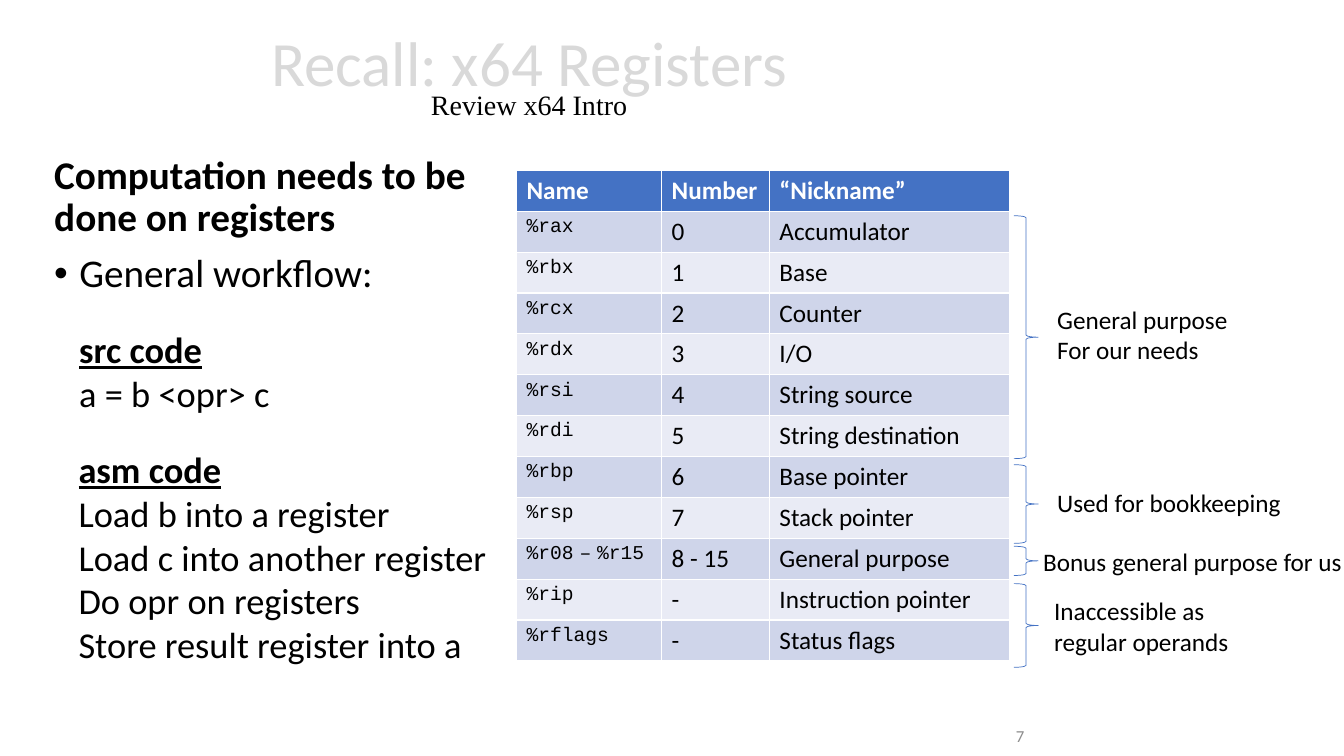
from lxml import etree
from pptx import Presentation
from pptx.dml.color import RGBColor
from pptx.enum.shapes import MSO_SHAPE
from pptx.enum.text import MSO_ANCHOR, MSO_AUTO_SIZE, PP_ALIGN
from pptx.oxml.ns import qn
from pptx.util import Pt

BLACK = RGBColor(0x00, 0x00, 0x00)
WHITE = RGBColor(0xFF, 0xFF, 0xFF)
BLUE = RGBColor(0x44, 0x72, 0xC4)
DARK_BAND = RGBColor(0xCF, 0xD5, 0xEA)
LIGHT_BAND = RGBColor(0xE9, 0xEB, 0xF5)
TITLE_GRAY = RGBColor(0xD9, 0xD9, 0xD9)
NUMBER_GRAY = RGBColor(0x8C, 0x8C, 0x8C)
RIGHT_BRACE = MSO_SHAPE.RIGHT_BRACE
MIDDLE = MSO_ANCHOR.MIDDLE
FIT_SHAPE, NO_FIT = MSO_AUTO_SIZE.SHAPE_TO_FIT_TEXT, MSO_AUTO_SIZE.NONE
CENTER, RIGHT = PP_ALIGN.CENTER, PP_ALIGN.RIGHT


def add_span(para, text, size, color=BLACK, name="Calibri", **formats):
    span = para.add_run()
    span.text = text
    span.font.color.rgb = color
    for key, value in {"size": Pt(size), "name": name, "bold": False, **formats}.items():
        setattr(span.font, key, value)


def add_label(left, top, width, height, lines, size, heading=False):
    """Add an unwrapped text box; heading makes its first line bold and underlined."""
    box = page.shapes.add_textbox(Pt(left), Pt(top), Pt(width), Pt(height))
    frame = box.text_frame
    frame.word_wrap = False
    frame.auto_size = FIT_SHAPE
    for index, line in enumerate(lines):
        para = frame.add_paragraph() if index else frame.paragraphs[0]
        marked = heading and index == 0
        add_span(para, line, size, bold=marked, underline=marked)


deck = Presentation()
deck.slide_width, deck.slide_height = Pt(960), Pt(540)
page = deck.slides.add_slide(deck.slide_layouts[5])

# Title
title = page.shapes.title
title.left, title.top, title.width, title.height = Pt(67.7), Pt(6.5), Pt(620.6), Pt(104.4)
title.text_frame.auto_size = NO_FIT
title.text_frame.vertical_anchor = MIDDLE
para = title.text_frame.paragraphs[0]
para.alignment = CENTER
para.line_spacing = 0.7
add_span(para, "Recall: x64 Registers", 45, TITLE_GRAY)
para.add_line_break()
add_span(para, "Review x64 Intro", 20, name="Times New Roman")

# Register table
HEADINGS = ["Name", "Number", "“Nickname”"]
REGISTERS = [
    ("%rax", "0", "Accumulator"),
    ("%rbx", "1", "Base"),
    ("%rcx", "2", "Counter"),
    ("%rdx", "3", "I/O"),
    ("%rsi", "4", "String source"),
    ("%rdi", "5", "String destination"),
    ("%rbp", "6", "Base pointer"),
    ("%rsp", "7", "Stack pointer"),
    ("%r08 – %r15", "8 - 15", "General purpose"),
    ("%rip", "-", "Instruction pointer"),
    ("%rflags", "-", "Status flags"),
]
ROW_HEIGHT = 29.2
rows = [HEADINGS, *REGISTERS]
table = page.shapes.add_table(
    len(rows), len(HEADINGS), Pt(368.9), Pt(121.7), Pt(352.1), Pt(ROW_HEIGHT * len(rows))
).table
for column, width in zip(table.columns, (103.7, 77, 171.4)):
    column.width = Pt(width)
for row_index, texts in enumerate(rows):
    table.rows[row_index].height = Pt(ROW_HEIGHT)
    for column_index, text in enumerate(texts):
        cell = table.cell(row_index, column_index)
        cell.fill.solid()
        para = cell.text_frame.paragraphs[0]
        if row_index == 0:
            cell.fill.fore_color.rgb = BLUE
            add_span(para, text, 18, WHITE, bold=True)
            continue
        cell.fill.fore_color.rgb = DARK_BAND if row_index % 2 else LIGHT_BAND
        if column_index:
            add_span(para, text, 18)
            continue
        for word_index, word in enumerate(text.split()):
            if word_index:
                add_span(para, " ", 7, name="Courier New")
            add_span(para, word, 14, name="Courier New")

# Body text
body = page.shapes.add_textbox(Pt(31.7), Pt(107.3), Pt(319.7), Pt(342.7)).text_frame
body.word_wrap = True
statement, workflow = body.paragraphs[0], body.add_paragraph()
add_span(statement, "Computation needs to be done on registers", 28, bold=True)
add_span(workflow, "General workflow:", 28)
for para in (statement, workflow):
    para.line_spacing = 0.9
    para.space_before = Pt(10)
properties = workflow._p.get_or_add_pPr()
properties.set("marL", str(Pt(18)))
properties.set("indent", str(Pt(-18)))
etree.SubElement(properties, qn("a:buFont")).set("typeface", "Arial")
etree.SubElement(properties, qn("a:buChar")).set("char", "•")

# Source and assembly steps
add_label(49.5, 230.4, 151.9, 70.6, ["src code", "a = b <opr> c"], 26, heading=True)
ASM_LINES = [
    "asm code",
    "Load b into a register",
    "Load c into another register",
    "Do opr on registers",
    "Store result register into a",
]
add_label(49, 316.1, 308.9, 164.9, ASM_LINES, 26, heading=True)

# Braces with their labels: brace top and height, then label box and lines
GROUPS = [
    (154.1, 173.5, (748.1, 213.8, 137.5, 51.1), ["General purpose", "For our needs"]),
    (331.9, 56.2, (748.1, 344.2, 175.7, 28.8), ["Used for bookkeeping"]),
    (390.2, 20.9, (738, 386.6, 230.4, 28.8), ["Bonus general purpose for us"]),
    (416.9, 59.8, (745.9, 421.9, 140.4, 51.1), ["Inaccessible as", "regular operands"]),
]
for top, height, label_box, lines in GROUPS:
    brace = page.shapes.add_shape(RIGHT_BRACE, Pt(724.3), Pt(top), Pt(17.3), Pt(height))
    brace.shadow.inherit = False
    brace.fill.background()
    brace.line.color.rgb = BLUE
    brace.line.width = Pt(0.5)
    add_label(*label_box, lines, 18)

# Page number
number = page.shapes.add_textbox(Pt(576.7), Pt(511.2), Pt(162), Pt(28.8)).text_frame
number.word_wrap = True
number.vertical_anchor = MIDDLE
number.paragraphs[0].alignment = RIGHT
add_span(number.paragraphs[0], "7", 12, NUMBER_GRAY)

deck.save("out.pptx")
